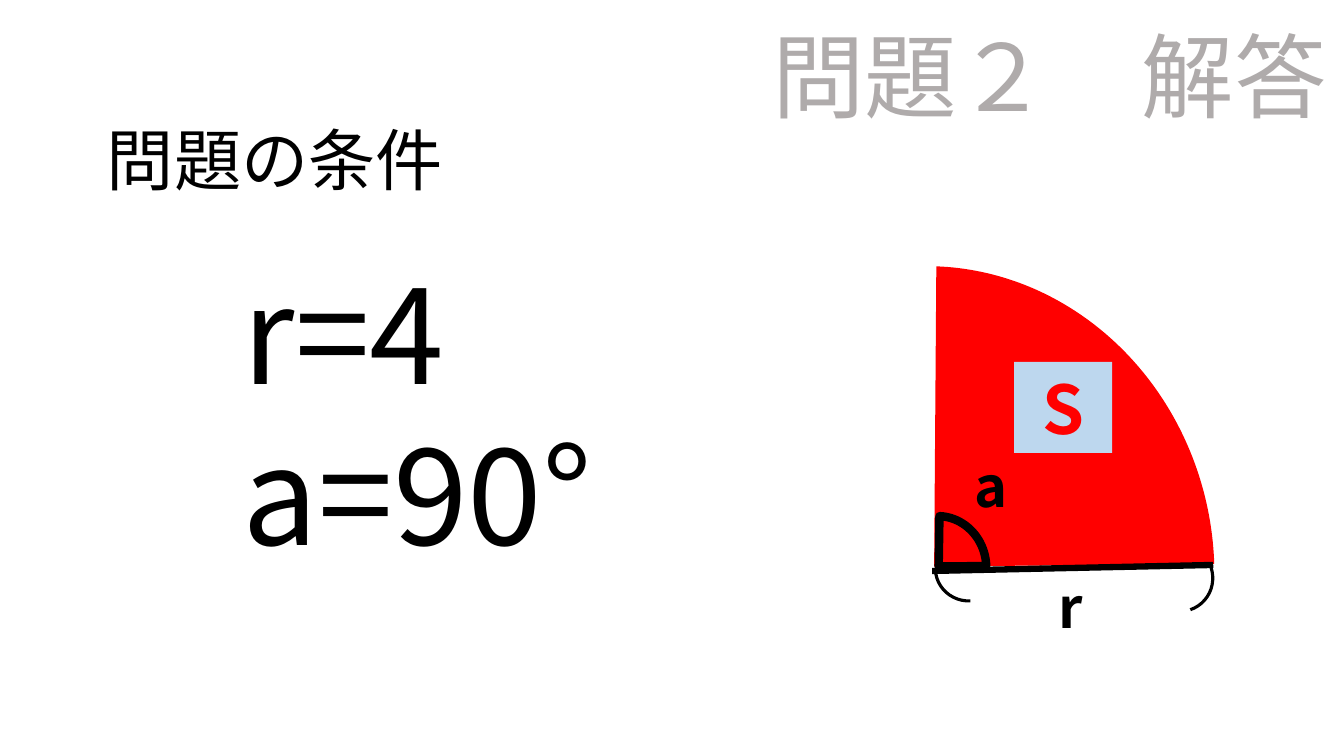
import pptx
import pptx.util
import pptx.dml.color
import pptx.enum.shapes
import pptx.enum.text
import pptx.oxml.ns
import lxml.etree

PX = 9071  # EMU per px, 100.8 px to the inch
FONT = "Noto Sans CJK JP"
HUES = {"ink": "000000", "gray": "AFABAB", "red": "FF0000", "pale": "BDD7EE"}
KIND = pptx.enum.shapes.MSO_SHAPE
ANCHOR = pptx.enum.text.MSO_ANCHOR
ALIGN = pptx.enum.text.PP_ALIGN


def color(name):
    return pptx.dml.color.RGBColor.from_string(HUES[name])


def write(frame, lines, size, hue, bold=False):
    """Put each line in its own paragraph, as one styled run."""
    for i, line in enumerate(lines):
        para = frame.add_paragraph() if i else frame.paragraphs[0]
        run = para.add_run()
        run.text = line
        font = run.font
        font.name, font.size, font.bold = FONT, pptx.util.Pt(size), bold
        font.color.rgb = color(hue)
        east = lxml.etree.SubElement(font._element, pptx.oxml.ns.qn("a:ea"))
        east.set("typeface", FONT)


deck = pptx.Presentation()
deck.slide_width = pptx.util.Inches(13.33)
deck.slide_height = pptx.util.Inches(7.5)
slide = deck.slides.add_slide(deck.slide_layouts[6])
shapes = slide.shapes

# Title, raised above the middle of its box by a deep lower inset
title = shapes.add_textbox(*[n * PX for n in (762, -203, 1281, 668)]).text_frame
title.word_wrap = True
title.vertical_anchor = ANCHOR.MIDDLE
title.margin_bottom = 117 * PX
write(title, ["問題２　解答"], 66, "gray")

# Sector, radius and angle mark: kind, box, turn, start and end degrees, fill, line
curves = [
    (KIND.PIE, (633, 287, 602, 559), 259.7, 10.72, 99.77, "red", 0),
    (KIND.PIE, (888, 519, 101, 95), 259.7, 11.24, 99.77, None, 6),
    (KIND.ARC, (935, 535, 67, 66), 177.2, 270, 0, None, 2.25),
    (KIND.ARC, (1146, 545, 67, 66), 71.5, 270, 0, None, 2.25),
]
for kind, box, turn, start, end, fill, width in curves:
    curve = shapes.add_shape(kind, *[n * PX for n in box])
    curve.shadow.inherit = False
    curve.rotation = turn
    for i, angle in enumerate((start, end)):
        curve.adjustments[i] = angle * 0.6  # 60000 units a degree, over 100000
    if fill:
        curve.fill.solid()
        curve.fill.fore_color.rgb = color(fill)
    else:
        curve.fill.background()
    if width:
        curve.line.color.rgb = color("ink")
        curve.line.width = pptx.util.Pt(width)
    else:
        curve.line.fill.background()

radius = shapes.add_connector(
    pptx.enum.shapes.MSO_CONNECTOR.STRAIGHT, *[n * PX for n in (932, 571, 1213, 565)])
radius.line.color.rgb = color("ink")
radius.line.width = pptx.util.Pt(4.5)
lxml.etree.SubElement(radius._element.spPr, pptx.oxml.ns.qn("a:effectLst"))

# Conditions and labels: lines, box, size, bold
notes = [
    (["r=4", "a=90°"], (233, 245, 481, 336), 96, False),
    (["問題の条件"], (97, 113, 360, 92), 48, False),
    (["a"], (964, 447, 48, 78), 40, True),
    (["r"], (1048, 568, 48, 78), 40, True),
]
for lines, box, size, bold in notes:
    frame = shapes.add_textbox(*[n * PX for n in box]).text_frame
    frame.word_wrap = False
    write(frame, lines, size, "ink", bold)

area = shapes.add_shape(KIND.RECTANGLE, *[n * PX for n in (1014, 362, 98, 91)])
area.shadow.inherit = False
area.fill.solid()
area.fill.fore_color.rgb = color("pale")
area.line.fill.background()
area.text_frame.vertical_anchor = ANCHOR.MIDDLE
write(area.text_frame, ["S"], 48, "red", True)
area.text_frame.paragraphs[0].alignment = ALIGN.CENTER

deck.save("out.pptx")
